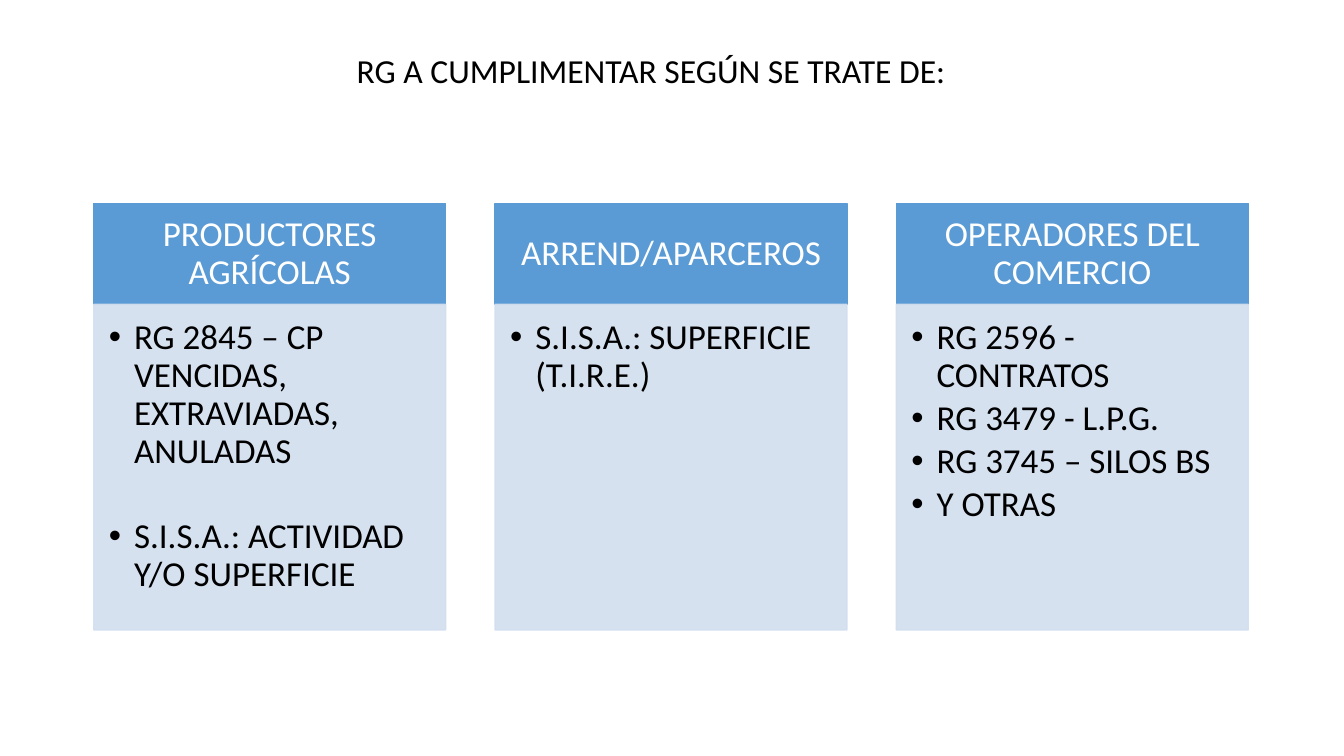
from lxml.etree import SubElement
from pptx import Presentation
from pptx.dml.color import RGBColor
from pptx.enum.shapes import MSO_SHAPE as Shape
from pptx.enum.text import MSO_ANCHOR as Anchor, MSO_AUTO_SIZE as AutoSize, PP_ALIGN as Align
from pptx.oxml.ns import qn
from pptx.util import Inches, Pt

COLORS = {"header": "5B9BD5", "body": "D2DEEF", "light": "FFFFFF", "dark": "000000"}
LEFT, PITCH, WIDTH = 0.93, 3.98, 3.49
HEADER_TOP, HEADER_HEIGHT, BODY_HEIGHT = 2.02, 1, 3.23
BULLET_GAP, WIDE_GAP = 3.75, 34

COLUMNS = [
    ("PRODUCTORES AGRÍCOLAS", [
        ("RG 2845 – CP VENCIDAS, EXTRAVIADAS, ANULADAS", WIDE_GAP),
        ("S.I.S.A.: ACTIVIDAD Y/O SUPERFICIE", BULLET_GAP),
    ]),
    ("ARREND/APARCEROS", [("S.I.S.A.: SUPERFICIE (T.I.R.E.)", BULLET_GAP)]),
    ("OPERADORES DEL COMERCIO", [
        ("RG 2596 - CONTRATOS", BULLET_GAP),
        ("RG 3479 - L.P.G.", BULLET_GAP),
        ("RG 3745 – SILOS BS", BULLET_GAP),
        ("Y OTRAS", BULLET_GAP),
    ]),
]


class SlideBuilder:
    font = "Calibri"
    text_size = 25
    title_size = 24

    def __init__(self, slide):
        self.slide = slide

    def add_run(self, paragraph, text, size, color):
        run = paragraph.add_run()
        run.text = text
        run.font.name = self.font
        run.font.size = Pt(size)
        run.font.color.rgb = RGBColor.from_string(COLORS[color])

    def title(self, text, left, top, width, height):
        box = self.slide.shapes.add_textbox(*map(Inches, (left, top, width, height)))
        frame = box.text_frame
        frame.word_wrap = True
        frame.auto_size = AutoSize.SHAPE_TO_FIT_TEXT
        self.add_run(frame.paragraphs[0], text, self.title_size, "dark")

    def panel(self, left, top, height, color, margins, anchor, opacity=100):
        shape = self.slide.shapes.add_shape(
            Shape.RECTANGLE, *map(Inches, (left, top, WIDTH, height)))
        shape.shadow.inherit = False
        shape.line.width = Pt(1)
        shape.fill.solid()
        for fill in (shape.fill, shape.line.fill):
            fill.solid()
            fill.fore_color.rgb = RGBColor.from_string(COLORS[color])
        if opacity < 100:
            for rgb in shape._element.spPr.iter(qn("a:srgbClr")):
                SubElement(rgb, qn("a:alpha"), val=str(opacity * 1000))
        frame = shape.text_frame
        frame.word_wrap = True
        frame.vertical_anchor = anchor
        (frame.margin_left, frame.margin_top,
         frame.margin_right, frame.margin_bottom) = map(Inches, margins)
        return frame

    def header(self, text, left):
        frame = self.panel(left, HEADER_TOP, HEADER_HEIGHT, "header",
                           (0.19, 0.11, 0.19, 0.11), Anchor.MIDDLE)
        paragraph = frame.paragraphs[0]
        paragraph.alignment = Align.CENTER
        paragraph.line_spacing = 0.9
        self.add_run(paragraph, text, self.text_size, "light")

    def bullet_list(self, items, left):
        frame = self.panel(left, HEADER_TOP + HEADER_HEIGHT, BODY_HEIGHT, "body",
                           (0.15, 0.15, 0.19, 0.22), Anchor.TOP, opacity=90)
        for index, (text, gap) in enumerate(items):
            paragraph = frame.add_paragraph() if index else frame.paragraphs[0]
            paragraph.alignment = Align.LEFT
            paragraph.level = 1
            paragraph.line_spacing = 0.9
            paragraph.space_after = Pt(gap)
            properties = paragraph._p.get_or_add_pPr()
            properties.set("marL", str(Inches(0.25)))
            properties.set("indent", str(-Inches(0.25)))
            SubElement(properties, qn("a:buFont"), typeface="Arial")
            SubElement(properties, qn("a:buChar"), char="•")
            self.add_run(paragraph, text, self.text_size, "dark")


def main():
    presentation = Presentation()
    presentation.slide_width = Inches(13.33)
    presentation.slide_height = Inches(7.5)
    builder = SlideBuilder(presentation.slides.add_slide(presentation.slide_layouts[6]))
    for index, (heading, items) in enumerate(COLUMNS):
        left = LEFT + index * PITCH
        builder.header(heading, left)
        builder.bullet_list(items, left)
    builder.title("RG A CUMPLIMENTAR SEGÚN SE TRATE DE:", 3.44, 0.45, 6.17, 0.5)
    presentation.save("out.pptx")


if __name__ == "__main__":
    main()
